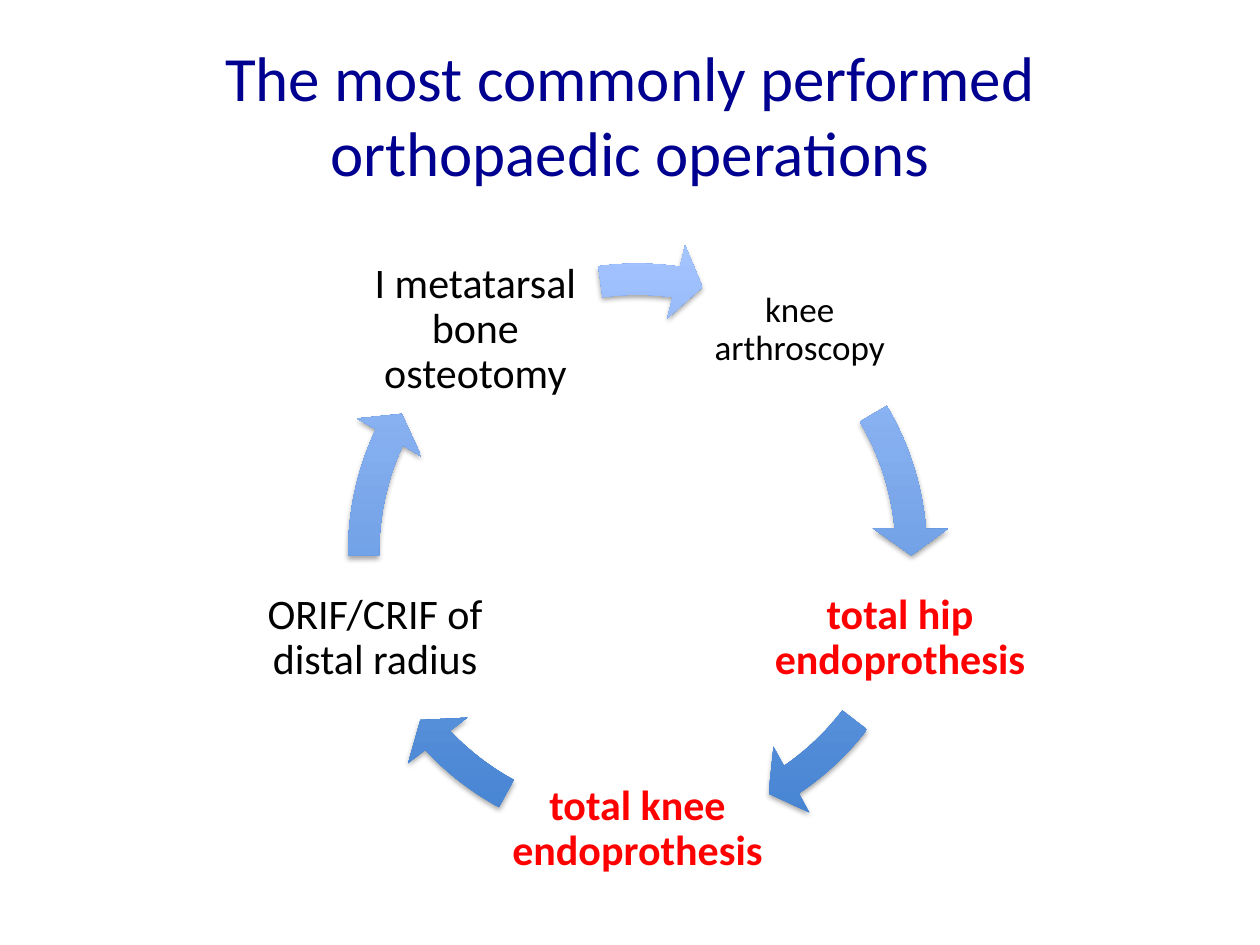
"""Build a slide showing common orthopaedic operations as a cycle."""
import dataclasses
import math

import lxml.etree
import pptx
import pptx.dml.color
import pptx.enum.shapes
import pptx.enum.text
import pptx.oxml.ns
import pptx.shapes.autoshape
import pptx.slide
import pptx.util

Inches = pptx.util.Inches
Pt = pptx.util.Pt
RGBColor = pptx.dml.color.RGBColor


@dataclasses.dataclass(frozen=True)
class Theme:
    font: str = "Calibri"
    title_size: int = 36
    label_size: int = 24
    small_size: int = 20
    title: RGBColor = RGBColor(0x00, 0x00, 0x90)
    text: RGBColor = RGBColor(0x00, 0x00, 0x00)
    highlight: RGBColor = RGBColor(0xFF, 0x00, 0x00)
    arrow_dark: RGBColor = RGBColor(0x3F, 0x7F, 0xCE)
    arrow_light: RGBColor = RGBColor(0xA4, 0xC4, 0xFF)
    shadow: RGBColor = RGBColor(0x00, 0x00, 0x00)


@dataclasses.dataclass(frozen=True)
class Operation:
    label: str
    width: float
    arrow_end: float
    arrow_start: float
    size: int
    highlighted: bool = False


THEME = Theme()
CENTER_X, CENTER_Y = 5.06, 4.39
LABEL_RADIUS = 2.19
LABEL_HEIGHT = 1.32
LABEL_INSET = 0.03
RING_SIZE = 4.94
FIRST_ANGLE = -54

OPERATIONS = [
    Operation("knee arthroscopy", 1.54, 212.93, 197.66, THEME.small_size),
    Operation("total hip endoprothesis", 2.38, 33.49, 22.53, THEME.label_size, True),
    Operation("total knee endoprothesis", 2.1, 82.11, 71.16, THEME.label_size, True),
    Operation("ORIF/CRIF of distal radius", 2.04, 122.98, 107.71, THEME.label_size),
    Operation("I metatarsal bone osteotomy", 1.98, 166.87, 157.33, THEME.label_size),
]


def add_title(slide: pptx.slide.Slide, text: str) -> None:
    """Fill and place the title placeholder."""
    title = slide.shapes.title
    title.left, title.top = Inches(0.5), Inches(0.28)
    title.width, title.height = Inches(9), Inches(1.25)
    title.text_frame.text = text
    title.text_frame.vertical_anchor = pptx.enum.text.MSO_ANCHOR.MIDDLE
    paragraph = title.text_frame.paragraphs[0]
    paragraph.alignment = pptx.enum.text.PP_ALIGN.CENTER
    paragraph.font.name = THEME.font
    paragraph.font.size = Pt(THEME.title_size)
    paragraph.font.color.rgb = THEME.title


def add_label(slide: pptx.slide.Slide, operation: Operation, degrees: float) -> None:
    """Centre an operation's label on the ring at the given angle."""
    angle = math.radians(degrees)
    left = CENTER_X + LABEL_RADIUS * math.cos(angle) - operation.width / 2
    top = CENTER_Y + LABEL_RADIUS * math.sin(angle) - LABEL_HEIGHT / 2
    label = slide.shapes.add_textbox(
        Inches(left), Inches(top), Inches(operation.width), Inches(LABEL_HEIGHT)
    )
    frame = label.text_frame
    frame.word_wrap = True
    frame.vertical_anchor = pptx.enum.text.MSO_ANCHOR.MIDDLE
    frame.margin_left = frame.margin_right = Inches(LABEL_INSET)
    frame.margin_top = frame.margin_bottom = Inches(LABEL_INSET)
    frame.text = operation.label
    paragraph = frame.paragraphs[0]
    paragraph.alignment = pptx.enum.text.PP_ALIGN.CENTER
    paragraph.line_spacing = 0.9
    paragraph.font.name = THEME.font
    paragraph.font.size = Pt(operation.size)
    paragraph.font.bold = operation.highlighted
    paragraph.font.color.rgb = THEME.highlight if operation.highlighted else THEME.text


def add_shadow(shape: pptx.shapes.autoshape.Shape) -> None:
    """Give a shape a soft shadow falling straight down."""
    qualify = pptx.oxml.ns.qn
    shape.shadow.inherit = False
    effects = shape._element.spPr.find(qualify("a:effectLst"))
    shadow = lxml.etree.SubElement(
        effects, qualify("a:outerShdw"), blurRad=str(Pt(3.1)), dist=str(Pt(1.8)),
        dir="5400000", rotWithShape="0",
    )
    color = lxml.etree.SubElement(shadow, qualify("a:srgbClr"), val=str(THEME.shadow))
    lxml.etree.SubElement(color, qualify("a:alpha"), val="35000")


def add_arrow(slide: pptx.slide.Slide, operation: Operation) -> None:
    """Draw the arc arrow leading from an operation to the next one."""
    arrow = slide.shapes.add_shape(
        pptx.enum.shapes.MSO_SHAPE.CIRCULAR_ARROW,
        Inches(CENTER_X - RING_SIZE / 2), Inches(CENTER_Y - RING_SIZE / 2),
        Inches(RING_SIZE), Inches(RING_SIZE),
    )
    values = (0.05, 3.36, operation.arrow_end, operation.arrow_start, 0.06)
    for index, value in enumerate(values):
        arrow.adjustments[index] = value
    arrow.fill.gradient()
    arrow.fill.gradient_angle = 90
    colors = (THEME.arrow_dark, THEME.arrow_light)
    for position, (stop, color) in enumerate(zip(arrow.fill.gradient_stops, colors)):
        stop.position = position
        stop.color.rgb = color
    arrow.line.fill.background()
    add_shadow(arrow)


def main() -> None:
    """Create and save the presentation."""
    presentation = pptx.Presentation()
    presentation.slide_width, presentation.slide_height = Inches(10), Inches(7.5)
    slide = presentation.slides.add_slide(presentation.slide_layouts[5])
    add_title(slide, "The most commonly performed orthopaedic operations")
    for index, operation in enumerate(OPERATIONS):
        add_label(slide, operation, FIRST_ANGLE + index * 360 / len(OPERATIONS))
        add_arrow(slide, operation)
    presentation.save("out.pptx")


if __name__ == "__main__":
    main()
